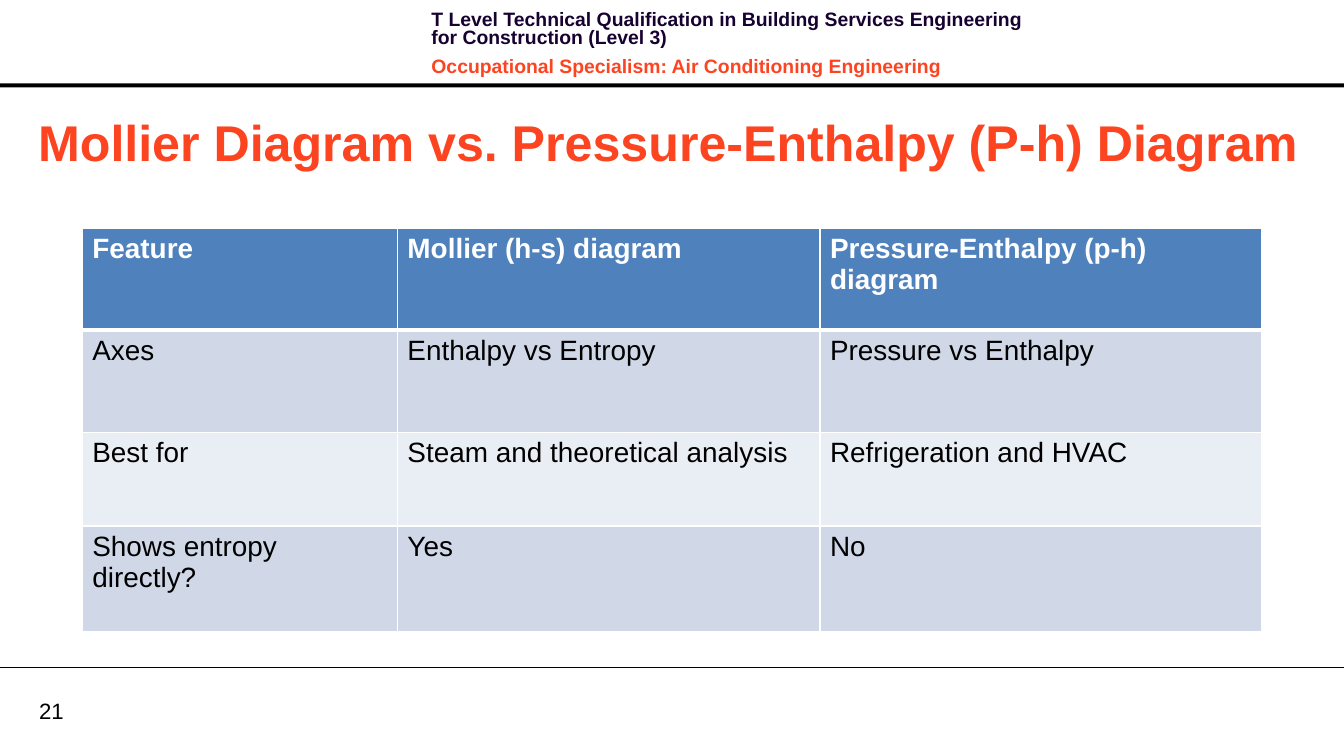
from dataclasses import dataclass

import lxml.etree
import pptx
import pptx.dml.color
import pptx.enum.shapes
import pptx.enum.text
import pptx.oxml.ns
import pptx.util

RGB = pptx.dml.color.RGBColor
ANCHOR = pptx.enum.text.MSO_ANCHOR
BLACK = RGB(0x00, 0x00, 0x00)
WHITE = RGB(0xFF, 0xFF, 0xFF)
NAVY = RGB(0x17, 0x01, 0x30)
ORANGE = RGB(0xFC, 0x44, 0x21)
HEADER_BLUE = RGB(0x4F, 0x81, 0xBD)
BANDS = (RGB(0xD0, 0xD8, 0xE8), RGB(0xE9, 0xED, 0xF4))
FONT = "Arial"
PX = 9144  # 100 px to the inch


@dataclass(frozen=True)
class Box:
    x: int
    y: int
    w: int
    h: int

    def emu(self) -> tuple[int, int, int, int]:
        return self.x * PX, self.y * PX, self.w * PX, self.h * PX


@dataclass(frozen=True)
class Style:
    size: float
    color: RGB
    bold: bool = False


@dataclass(frozen=True)
class HeaderLine:
    text: str
    color: RGB


HEADER = (
    HeaderLine("T Level Technical Qualification in Building Services Engineering "
               "for Construction (Level 3)", NAVY),
    HeaderLine("Occupational Specialism: Air Conditioning Engineering", ORANGE),
)
COLS = (314, 421, 440)
ROWS = (102, 102, 93, 105)
CELLS = (
    ("Feature", "Mollier (h-s) diagram", "Pressure-Enthalpy (p-h) diagram"),
    ("Axes", "Enthalpy vs Entropy", "Pressure vs Enthalpy"),
    ("Best for", "Steam and theoretical analysis", "Refrigeration and HVAC"),
    ("Shows entropy directly?", "Yes", "No"),
)


def add_run(p, text: str, style: Style) -> None:
    r = p.add_run()
    r.text = text
    r.font.name = FONT
    r.font.size = pptx.util.Pt(style.size)
    r.font.bold = style.bold
    r.font.color.rgb = style.color


def set_frame(tf, anchor: ANCHOR, inset_x: int = 10, inset_y: int = 5) -> None:
    tf.word_wrap = True
    tf.auto_size = pptx.enum.text.MSO_AUTO_SIZE.NONE
    tf.vertical_anchor = anchor
    tf.margin_left = tf.margin_right = inset_x * PX
    tf.margin_top = tf.margin_bottom = inset_y * PX


def add_border(cell, side: str, width: float) -> None:
    tc_pr = cell._tc.get_or_add_tcPr()
    qn = pptx.oxml.ns.qn
    ln = lxml.etree.SubElement(tc_pr, qn(f"a:{side}"), w=str(pptx.util.Pt(width)))
    fill = lxml.etree.SubElement(ln, qn("a:solidFill"))
    lxml.etree.SubElement(fill, qn("a:srgbClr"), val=str(WHITE))


def add_rules(s) -> None:
    bar = s.shapes.add_shape(pptx.enum.shapes.MSO_SHAPE.RECTANGLE, *Box(0, 83, 1339, 4).emu())
    bar.shadow.inherit = False
    bar.fill.solid()
    bar.fill.fore_color.rgb = BLACK
    bar.line.fill.background()
    rule = s.shapes.add_connector(pptx.enum.shapes.MSO_CONNECTOR.STRAIGHT,
                                  0, 665 * PX, 1339 * PX, 665 * PX)
    rule.line.color.rgb = BLACK
    rule.line.width = pptx.util.Pt(0.75)
    lxml.etree.SubElement(rule._element.spPr, pptx.oxml.ns.qn("a:effectLst"))


def add_header(s) -> None:
    tf = s.shapes.add_textbox(*Box(420, 7, 633, 64).emu()).text_frame
    set_frame(tf, ANCHOR.TOP)
    for i, line in enumerate(HEADER):
        p = tf.add_paragraph() if i else tf.paragraphs[0]
        p.line_spacing = pptx.util.Pt(13)
        p.space_before = pptx.util.Pt(4 if i else 0)
        p.space_after = pptx.util.Pt(4)
        add_run(p, line.text, Style(13.9, line.color, True))


def add_title(s) -> None:
    sp = s.shapes.title
    sp.left, sp.top, sp.width, sp.height = Box(28, 106, 1287, 71).emu()
    set_frame(sp.text_frame, ANCHOR.TOP)
    p = sp.text_frame.paragraphs[0]
    p.alignment = pptx.enum.text.PP_ALIGN.LEFT
    p.space_before = pptx.util.Pt(0)
    add_run(p, "Mollier Diagram vs. Pressure‑Enthalpy (P‑h) Diagram", Style(36, ORANGE, True))


def add_page_number(s) -> None:
    tf = s.shapes.add_textbox(*Box(39, 694, 64, 27).emu()).text_frame
    set_frame(tf, ANCHOR.MIDDLE, 0, 0)
    add_run(tf.paragraphs[0], "21", Style(15.9, BLACK))


def add_comparison(s) -> None:
    box = Box(82, 227, sum(COLS), sum(ROWS))
    table = s.shapes.add_table(len(ROWS), len(COLS), *box.emu()).table
    for col, w in zip(table.columns, COLS):
        col.width = w * PX
    for i, (row, h) in enumerate(zip(table.rows, ROWS)):
        row.height = h * PX
        style = Style(20, BLACK if i else WHITE, i == 0)
        for cell, text in zip(row.cells, CELLS[i]):
            add_run(cell.text_frame.paragraphs[0], text, style)
            # Borders come before the fill in the cell properties
            for side, width in (("lnL", 1), ("lnR", 1),
                                ("lnT", 3 if i == 1 else 1), ("lnB", 1 if i else 3)):
                add_border(cell, side, width)
            cell.fill.solid()
            cell.fill.fore_color.rgb = BANDS[(i - 1) % 2] if i else HEADER_BLUE


def main() -> None:
    prs = pptx.Presentation()
    prs.slide_width, prs.slide_height = 1339 * PX, 748 * PX
    s = prs.slides.add_slide(prs.slide_layouts[5])  # title only

    # Page furniture
    add_rules(s)
    add_header(s)
    add_page_number(s)

    # Content
    add_title(s)
    add_comparison(s)
    prs.save("out.pptx")


if __name__ == "__main__":
    main()
